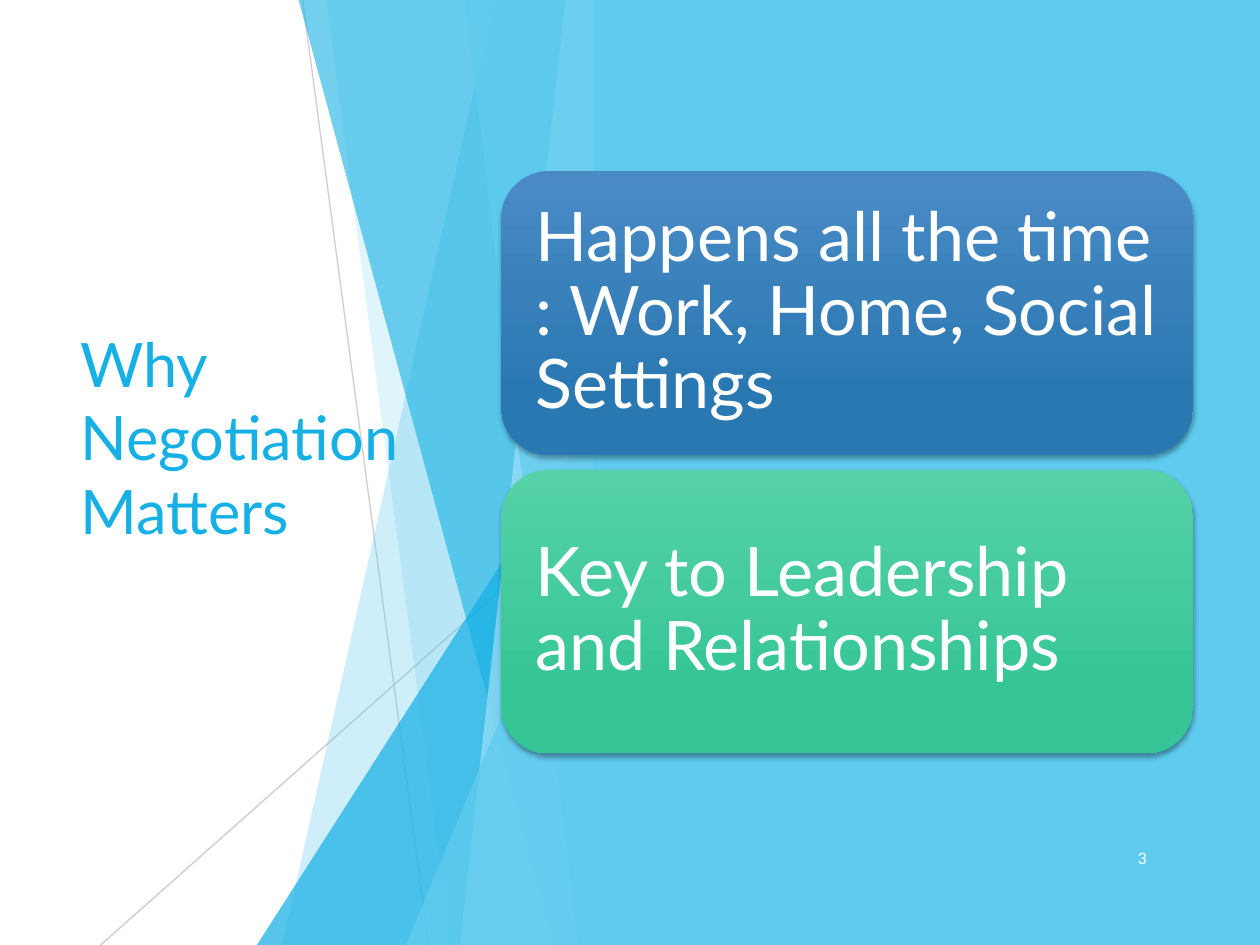
"""Build the "Why Negotiation Matters" slide."""
import pptx
import pptx.dml.color
import pptx.enum.shapes
import pptx.enum.text
import pptx.oxml
import pptx.oxml.ns
import pptx.util
from pptx.util import Cm

THEME = {
    "font": "Lato",
    "title_size": 35, "card_size": 39, "number_size": 9,
    "white": "FFFFFF", "sky": "5FCBEF", "blue": "17B0E4",
    "pale": "9FE0F5", "grey": "BFBFBF",
    "card_blue": ("4A8BC6", "2A78B2"), "card_green": ("56D2A7", "36C596"),
}
TITLE = "Why Negotiation Matters"
CARDS = [
    ("Happens all the time : Work, Home, Social Settings", "card_blue"),
    ("Key to Leadership and Relationships", "card_green"),
]
NUMBER = "3"

WIDTH, HEIGHT, PANEL_LEFT = 25.4, 19.05, 11.96
RAYS = [((6.1, 0), (8.64, HEIGHT), 75), ((PANEL_LEFT, 10.24), (2.03, HEIGHT), 80)]
FACETS = [
    ("band", 9.96, 5.69, "sky", 30),
    ("band", 6.58, 9.09, "sky", 20),
    ("wedge", 5.18, 8.46, "blue", 72),
    ("band", 6.02, 11.18, "blue", 60),
    ("band", 11.4, 9.27, "pale", 70),
    ("band", 9.37, 11.66, "sky", 65),
    ("wedge", 8.18, 9.98, "sky", 80),
]
CARD_LEFT, CARD_TOP, CARD_WIDTH, CARD_HEIGHT, CARD_PITCH = 10.11, 3.45, 13.94, 5.72, 6.02
SHAPES = pptx.enum.shapes.MSO_SHAPE
ALIGN = pptx.enum.text.PP_ALIGN


def rgb(key):
    return pptx.dml.color.RGBColor.from_string(THEME.get(key, key))


def apply(target, formats):
    for attribute, value in formats.items():
        setattr(target, attribute, value)


def add_xml(parent, tag, **attributes):
    child = pptx.oxml.parse_xml(f"<a:{tag} {pptx.oxml.ns.nsdecls('a')}/>")
    for key, value in attributes.items():
        child.set(key, str(value))
    parent.append(child)
    return child


def set_opacity(fill, percent):
    solid = fill._xPr.find(pptx.oxml.ns.qn("a:solidFill"))
    add_xml(solid[0], "alpha", val=percent * 1000)


def paint(part, color, opacity=100):
    part.shadow.inherit = False
    part.line.fill.background()
    part.fill.solid()
    part.fill.fore_color.rgb = rgb(color)
    if opacity < 100:
        set_opacity(part.fill, opacity)


def write(part, text, size, color, frame_formats, paragraph_formats):
    frame = part.text_frame
    apply(frame, {"word_wrap": True,
                  "vertical_anchor": pptx.enum.text.MSO_ANCHOR.MIDDLE, **frame_formats})
    paragraph = frame.paragraphs[0]
    paragraph.text = text
    apply(paragraph, paragraph_formats)
    apply(paragraph.runs[0].font, {"name": THEME["font"], "size": pptx.util.Pt(THEME[size])})
    paragraph.runs[0].font.color.rgb = rgb(color)


def add_ray(shapes, start, end, opacity):
    ray = shapes.add_connector(pptx.enum.shapes.MSO_CONNECTOR.STRAIGHT,
                               *map(Cm, start + end))
    ray.line.width = pptx.util.Pt(0.75)
    ray.line.color.rgb = rgb("grey")
    set_opacity(ray.line.fill, opacity)
    add_xml(ray._element.spPr, "effectLst")


def add_facet(shapes, kind, first, second, color, opacity):
    if kind == "band":
        corners = [(PANEL_LEFT, 0), (PANEL_LEFT, HEIGHT), (second, HEIGHT)]
        builder = shapes.build_freeform(Cm(first), 0)
        builder.add_line_segments([(Cm(x), Cm(y)) for x, y in corners], close=True)
        facet = builder.convert_to_shape()
    else:
        facet = shapes.add_shape(SHAPES.ISOSCELES_TRIANGLE, Cm(first), Cm(second),
                                 Cm(PANEL_LEFT - first), Cm(HEIGHT - second))
        facet.adjustments[0] = 1
    paint(facet, color, opacity)


def add_card(shapes, index, text, gradient):
    card = shapes.add_shape(SHAPES.ROUNDED_RECTANGLE, Cm(CARD_LEFT),
                            Cm(CARD_TOP + index * CARD_PITCH),
                            Cm(CARD_WIDTH), Cm(CARD_HEIGHT))
    paint(card, "white")
    card.fill.gradient()
    card.fill.gradient_angle = 270
    for stop, color, position in zip(card.fill.gradient_stops, THEME[gradient], (0, 0.78)):
        stop.color.rgb = rgb(color)
        stop.position = position
    effects = card._element.spPr.find(pptx.oxml.ns.qn("a:effectLst"))
    shadow = add_xml(effects, "outerShdw", blurRad=pptx.util.Pt(3), dist=pptx.util.Pt(2),
                     dir=5400000, algn="ctr", rotWithShape=0)
    add_xml(add_xml(shadow, "srgbClr", val="000000"), "alpha", val=35000)
    insets = {f"margin_{side}": Cm(0.41) for side in ("left", "top", "right", "bottom")}
    write(card, text, "card_size", "white", insets,
          {"alignment": ALIGN.LEFT, "line_spacing": 0.9})


def main():
    deck = pptx.Presentation()
    apply(deck, {"slide_width": Cm(WIDTH), "slide_height": Cm(HEIGHT)})
    shapes = deck.slides.add_slide(deck.slide_layouts[6]).shapes
    for ray in RAYS:
        add_ray(shapes, *ray)
    for facet in FACETS:
        add_facet(shapes, *facet)
    title = shapes.add_textbox(Cm(1.37), Cm(3.84), Cm(7.39), Cm(11.38))
    write(title, TITLE, "title_size", "blue", {"margin_bottom": Cm(1.6)},
          {"alignment": ALIGN.LEFT})
    panel = shapes.add_shape(SHAPES.RECTANGLE, Cm(PANEL_LEFT), 0,
                             Cm(WIDTH - PANEL_LEFT), Cm(HEIGHT))
    paint(panel, "sky")
    number = shapes.add_textbox(Cm(21.95), Cm(16.79), Cm(1.42), Cm(1.02))
    write(number, NUMBER, "number_size", "white", {},
          {"alignment": ALIGN.RIGHT, "space_after": pptx.util.Pt(6)})
    for index, (text, gradient) in enumerate(CARDS):
        add_card(shapes, index, text, gradient)
    deck.save("out.pptx")


if __name__ == "__main__":
    main()
